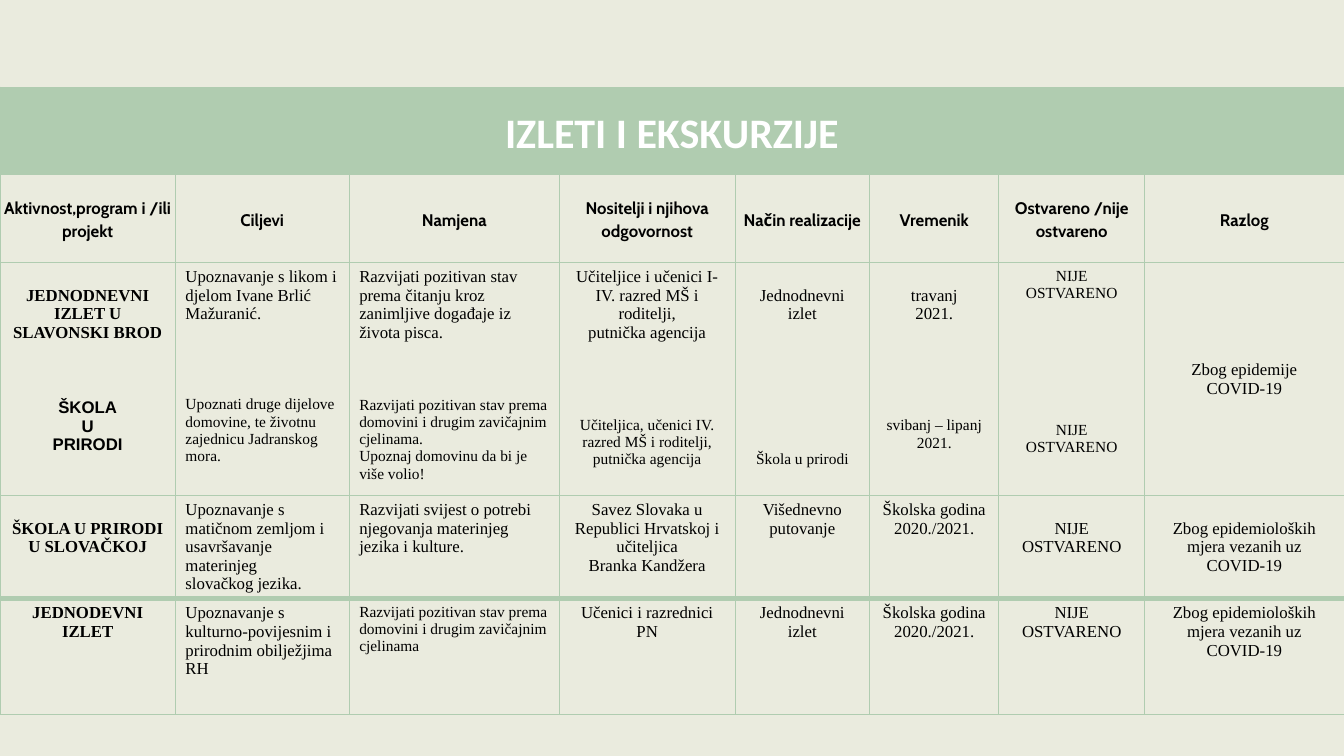
from copy import deepcopy

from lxml import etree
from pptx import Presentation
from pptx.dml.color import RGBColor
from pptx.enum.text import MSO_ANCHOR, PP_ALIGN
from pptx.oxml.ns import qn
from pptx.util import Cm, Pt

LEFT, CENTER = PP_ALIGN.LEFT, PP_ALIGN.CENTER
TOP, MIDDLE = MSO_ANCHOR.TOP, MSO_ANCHOR.MIDDLE

CREAM = RGBColor(0xEA, 0xEB, 0xDE)
GREEN = RGBColor(0xB0, 0xCC, 0xB0)
WHITE = RGBColor(0xFF, 0xFF, 0xFF)
BLACK = RGBColor(0x00, 0x00, 0x00)

COLUMNS = [4.42, 4.38, 5.3, 4.42, 3.4, 3.25, 3.68, 5.02]
ROWS = [2.21, 2.21, 5.87, 2.6, 2.92]
LINE = 13.3  # height of one 12 pt line of body text, in points
THIN, THICK = 0.5, 4

TITLE = {"name": "Calibri", "size": Pt(30), "bold": True}
HEADER = {"name": "Cabin", "size": Pt(12), "bold": True}
BODY = {"name": "Times New Roman", "size": Pt(12), "bold": False}
SMALL = BODY | {"size": Pt(11)}
STRONG = BODY | {"bold": True}
SANS = STRONG | {"name": "Arial"}

HEADINGS = [
    "Aktivnost,program i /ili projekt", "Ciljevi", "Namjena",
    "Nositelji i njihova odgovornost", "Način realizacije", "Vremenik",
    "Ostvareno /nije ostvareno", "Razlog",
]

# Each cell lists its paragraphs: text, format, space before in points
ACTIVITIES = [
    [
        [("JEDNODNEVNI\nIZLET U SLAVONSKI BROD", STRONG, LINE),
         ("ŠKOLA\nU\nPRIRODI", SANS, 40)],
        [("Upoznavanje s likom i djelom Ivane Brlić Mažuranić.", BODY, 0),
         ("Upoznati druge dijelove domovine, te životnu zajednicu "
          "Jadranskog mora.", SMALL, 52)],
        [("Razvijati pozitivan stav prema čitanju kroz zanimljive događaje "
          "iz života pisca.", BODY, 0),
         ("Razvijati pozitivan stav prema domovini i drugim zavičajnim "
          "cjelinama.\nUpoznaj domovinu da bi je više volio!", SMALL, 39)],
        [("Učiteljice i učenici I-IV. razred MŠ i roditelji,\n"
          "putnička agencija", BODY, 0),
         ("Učiteljica, učenici IV. razred MŠ i roditelji,\n"
          "putnička agencija", SMALL, 53)],
        [("Jednodnevni izlet", BODY, LINE), ("Škola u prirodi", SMALL, 91)],
        [("travanj\n2021.", BODY, LINE), ("svibanj – lipanj 2021.", SMALL, 67)],
        [("NIJE OSTVARENO", SMALL, 0), ("NIJE OSTVARENO", SMALL, 85.5)],
        [("Zbog epidemije COVID-19", BODY, 5 * LINE)],
    ],
    [
        [("ŠKOLA U PRIRODI U SLOVAČKOJ", STRONG, LINE)],
        [("Upoznavanje s matičnom zemljom i usavršavanje materinjeg\n"
          "slovačkog jezika.", BODY, 0)],
        [("Razvijati svijest o potrebi njegovanja materinjeg jezika i "
          "kulture.", BODY, 0)],
        [("Savez Slovaka u Republici Hrvatskoj i učiteljica\n"
          "Branka Kandžera", BODY, 0)],
        [("Višednevno putovanje", BODY, 0)],
        [("Školska godina 2020./2021.", BODY, 0)],
        [("NIJE OSTVARENO", BODY, LINE)],
        [("Zbog epidemioloških mjera vezanih uz COVID-19", BODY, LINE)],
    ],
    [
        [("JEDNODEVNI IZLET", STRONG, 0)],
        [("Upoznavanje s kulturno-povijesnim i prirodnim obilježjima RH",
          BODY, 0)],
        [("Razvijati pozitivan stav prema domovini i drugim zavičajnim "
          "cjelinama", SMALL, 0)],
        [("Učenici i razrednici PN", BODY, 0)],
        [("Jednodnevni izlet", BODY, 0)],
        [("Školska godina 2020./2021.", BODY, 0)],
        [("NIJE OSTVARENO", BODY, 0)],
        [("Zbog epidemioloških mjera vezanih uz COVID-19", BODY, 0)],
    ],
]


def set_borders(cell, top=THIN, bottom=THIN):
    tcPr = cell._tc.get_or_add_tcPr()
    for side, width in (("L", THIN), ("R", THIN), ("T", top), ("B", bottom)):
        ln = etree.SubElement(tcPr, qn(f"a:ln{side}"), w=str(Pt(width)))
        fill = etree.SubElement(ln, qn("a:solidFill"))
        etree.SubElement(fill, qn("a:srgbClr"), val=str(GREEN))


def write_paragraph(p, text, style, color, align):
    p.text = text
    p.alignment = align
    for r in p.runs:
        for name, value in style.items():
            setattr(r.font, name, value)
        r.font.color.rgb = color
    # Line breaks take the text size, so that line heights stay even
    for br in p._p.findall(qn("a:br")):
        br.append(deepcopy(p.runs[0]._r.rPr))


def fill_heading(cell, text, style, color):
    for name, value in {
        "vertical_anchor": MIDDLE, "margin_left": Cm(0.1),
        "margin_right": Cm(0.1), "margin_top": 0, "margin_bottom": 0,
    }.items():
        setattr(cell, name, value)
    p = cell.text_frame.paragraphs[0]
    write_paragraph(p, text, style, color, CENTER)
    p.line_spacing = 1.15


def fill_activity(cell, paragraphs, align):
    cell.vertical_anchor = TOP
    tf = cell.text_frame
    for i, (text, style, gap) in enumerate(paragraphs):
        p = tf.add_paragraph() if i else tf.paragraphs[0]
        write_paragraph(p, text, style, BLACK, align)
        if i:
            p.space_before = Pt(gap)
        else:
            cell.margin_top = Cm(0.13) + Pt(gap)


def add_trips_table(s, left, top, width, height):
    table = s.shapes.add_table(
        len(ROWS), len(COLUMNS), left, top, width, height).table
    table.first_row = table.horz_banding = False
    for column, size in zip(table.columns, COLUMNS):
        column.width = Cm(size)
    for row, size in zip(table.rows, ROWS):
        row.height = Cm(size)

    # Borders, with a thick rule above the last row
    last = len(ROWS) - 1
    for i, row in enumerate(table.rows):
        for cell in row.cells:
            set_borders(cell, top=THICK if i == last else THIN,
                        bottom=THICK if i == last - 1 else THIN)
            cell.fill.background()

    # Title band
    title = table.cell(0, 0)
    title.merge(table.cell(0, len(COLUMNS) - 1))
    title.fill.solid()
    title.fill.fore_color.rgb = GREEN
    fill_heading(title, "IZLETI I EKSKURZIJE", TITLE, WHITE)

    # Column headings
    for j, text in enumerate(HEADINGS):
        fill_heading(table.cell(1, j), text, HEADER, BLACK)

    # Activities: goals and purpose are left-aligned
    for i, activity in enumerate(ACTIVITIES, start=2):
        for j, paragraphs in enumerate(activity):
            fill_activity(table.cell(i, j), paragraphs,
                          LEFT if j in (1, 2) else CENTER)


def main():
    prs = Presentation()
    prs.slide_width, prs.slide_height = Cm(33.87), Cm(19.05)
    s = prs.slides.add_slide(prs.slide_layouts[6])
    s.background.fill.solid()
    s.background.fill.fore_color.rgb = CREAM
    add_trips_table(s, 0, Cm(2.19), Cm(sum(COLUMNS)), Cm(sum(ROWS)))
    prs.save("out.pptx")


if __name__ == "__main__":
    main()
